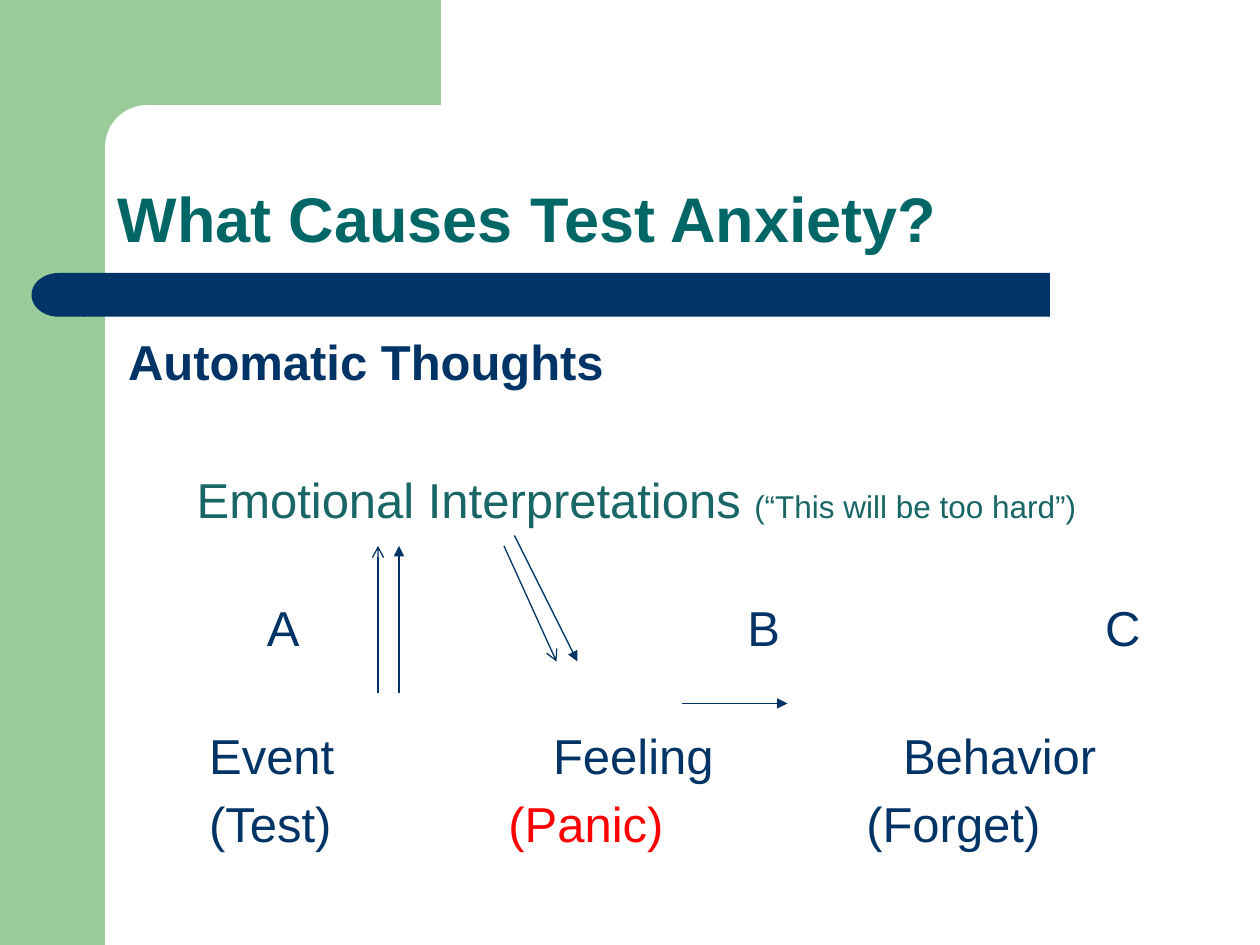
from math import cos, pi, sin

from lxml.etree import SubElement
from pptx import Presentation
from pptx.dml.color import RGBColor
from pptx.enum.shapes import MSO_CONNECTOR, MSO_SHAPE
from pptx.enum.text import MSO_ANCHOR, MSO_AUTO_SIZE, PP_ALIGN
from pptx.oxml.ns import qn
from pptx.util import Pt

GREEN, NAVY, TEAL = "99CC99", "003366", "006666"
SOFT_TEAL, RED = "196666", "FF0000"
FONT = "Arial"

# Space before, left indent, bold, then (text, colour, size) for each piece
BODY_LINES = [
    (0, 0, True, [("Automatic Thoughts", NAVY, 28)]),
    (44.8, 39.2, False, [("Emotional Interpretations ", SOFT_TEAL, 28),
                         ("(“This will be too hard”)", SOFT_TEAL, 18)]),
]

# Space before, then (tab stop, text, colour) for each column
DIAGRAM_LINES = [
    (0, [(79.5, "A", NAVY), (354, "B", NAVY), (558.5, "C", NAVY)]),
    (39.3, [(46.5, "Event", NAVY), (243, "Feeling", NAVY), (443, "Behavior", NAVY)]),
    (5.6, [(46.5, "(Test)", NAVY), (217.5, "(Panic)", RED), (422, "(Forget)", NAVY)]),
]

# Start x, start y, end x, end y, arrowhead
ARROWS = [
    (390, 402, 450, 402, "triangle"),
    (228, 396, 228, 312, "triangle"),
    (294, 306, 330, 378, "triangle"),
    (216, 396, 216, 312, "arrow"),
    (288, 312, 318, 378, "arrow"),
]


def color(value):
    return RGBColor.from_string(value)


def paint(shape, value):
    shape.shadow.inherit = False
    shape.fill.solid()
    shape.fill.fore_color.rgb = color(value)
    shape.line.fill.background()


def add_block(page, kind, left, top, width, height, value):
    block = page.shapes.add_shape(kind, Pt(left), Pt(top), Pt(width), Pt(height))
    paint(block, value)
    return block


def add_corner(page):
    """Top band whose lower edge curves into the left band."""
    radius, edge = 24, 60
    center = edge + radius
    arc = [(center - radius * sin(step * pi / 32), center - radius * cos(step * pi / 32))
           for step in range(17)]
    outline = [(252, 0), (252, edge), *arc, (edge, 92), (36, 92), (36, 0)]
    points = [(x * 100, y * 100) for x, y in outline]
    builder = page.shapes.build_freeform(*points[0], scale=Pt(1) / 100)
    builder.add_line_segments(points[1:])
    paint(builder.convert_to_shape(), GREEN)


def add_arrow(page, x1, y1, x2, y2, head):
    arrow = page.shapes.add_connector(
        MSO_CONNECTOR.STRAIGHT, Pt(x1), Pt(y1), Pt(x2), Pt(y2))
    arrow.line.color.rgb = color(NAVY)
    arrow.line.width = Pt(0.75)
    SubElement(arrow.line._get_or_add_ln(), qn("a:tailEnd"), type=head)
    SubElement(arrow._element.spPr, qn("a:effectLst"))


def place(box, left, top, width, height):
    box.left, box.top, box.width, box.height = Pt(left), Pt(top), Pt(width), Pt(height)
    box.text_frame.auto_size = MSO_AUTO_SIZE.NONE
    box.text_frame.word_wrap = True


def add_span(para, text, value, size):
    span = para.add_run()
    span.text = text
    span.font.size = Pt(size)
    span.font.color.rgb = color(value)


def paragraphs(frame, lines):
    """Yield one paragraph of the frame for each line, with that line."""
    for index, line in enumerate(lines):
        yield (frame.add_paragraph() if index else frame.paragraphs[0]), line


def fill_title(title):
    place(title, 60, 60, 624, 90)
    title.text_frame.vertical_anchor = MSO_ANCHOR.BOTTOM
    para = title.text_frame.paragraphs[0]
    para.text = "What Causes Test Anxiety?"
    para.alignment = PP_ALIGN.LEFT
    para.line_spacing = 0.9
    para.font.name, para.font.size, para.font.bold = FONT, Pt(36), True
    para.font.color.rgb = color(TEAL)


def fill_body(body):
    place(body, 66, 186, 606, 150)
    for para, (space, indent, bold, pieces) in paragraphs(body.text_frame, BODY_LINES):
        properties = para._p.get_or_add_pPr()
        properties.set("marL", str(Pt(indent)))
        properties.set("indent", "0")
        SubElement(properties, qn("a:buNone"))
        para.space_before = Pt(space)
        para.font.name, para.font.bold = FONT, bold
        for piece in pieces:
            add_span(para, *piece)


def add_diagram_text(page):
    box = page.shapes.add_textbox(0, 0, 0, 0)
    place(box, 66, 338, 606, 160)
    for para, (space, columns) in paragraphs(box.text_frame, DIAGRAM_LINES):
        tabs = SubElement(para._p.get_or_add_pPr(), qn("a:tabLst"))
        para.space_before = Pt(space)
        para.font.name = FONT
        for stop, text, value in columns:
            SubElement(tabs, qn("a:tab"), pos=str(Pt(stop)), algn="l")
            add_span(para, "\t" + text, value, 28)


def main():
    deck = Presentation()
    deck.slide_width, deck.slide_height = Pt(720), Pt(540)
    page = deck.slides.add_slide(deck.slide_layouts[1])
    title, body = page.placeholders

    add_block(page, MSO_SHAPE.RECTANGLE, 0, 0, 60, 540, GREEN)
    add_corner(page)
    add_block(page, MSO_SHAPE.RECTANGLE, 48, 156, 552, 25, NAVY)
    cap = add_block(page, MSO_SHAPE.FLOWCHART_DELAY, 18, 156, 31, 25, NAVY)
    cap.rotation = 180

    for box, fill in ((title, fill_title), (body, fill_body)):
        page.shapes._spTree.append(box._element)  # bring in front of the bands
        fill(box)
    add_diagram_text(page)
    for arrow in ARROWS:
        add_arrow(page, *arrow)
    deck.save("out.pptx")


if __name__ == "__main__":
    main()
